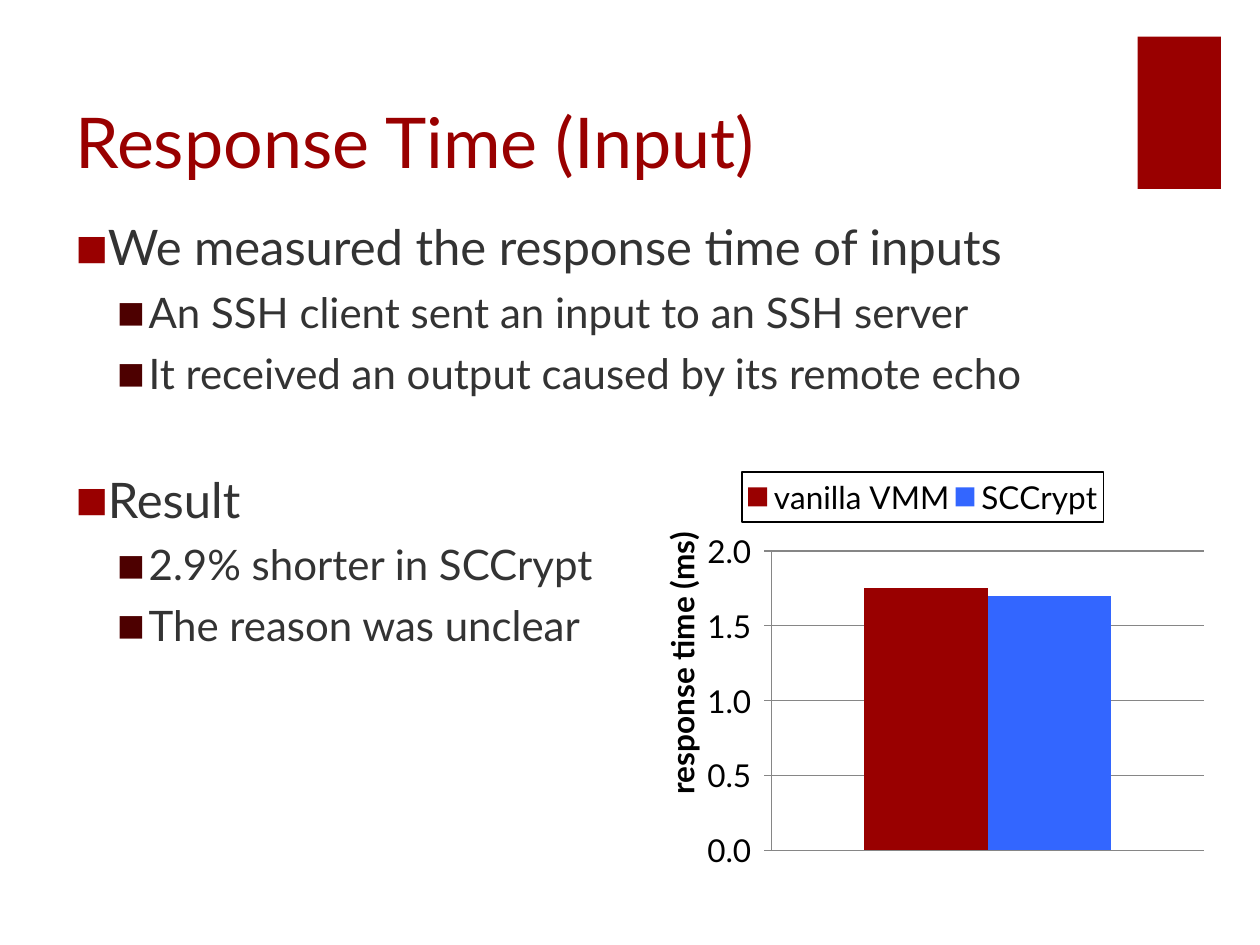
"""Builds the slide on response time for inputs, with its column chart."""
from lxml import etree
from pptx import Presentation, util as u
from pptx.chart import data
from pptx.dml.color import RGBColor
from pptx.enum import chart as ch, shapes, text
from pptx.oxml import parse_xml
from pptx.oxml.ns import nsdecls, qn

RED, DARK, GREY, BLUE = "990000", "4D0000", "333333", "3366FF"
FONT = "Lato"


def paint(item, color):
    if hasattr(item, "solid"):
        item.solid()
        item = item.fore_color
    else:
        item = item.color
    item.rgb = RGBColor.from_string(color)


def place(node, index, box, inner=False):
    for old in node.findall(qn("c:layout")):
        node.remove(old)
    target = '<c:layoutTarget val="inner"/>' if inner else ""
    modes = "".join(f'<c:{k}Mode val="edge"/>' for k in "xy")
    sizes = "".join(f'<c:{k} val="{v}"/>' for k, v in zip("xywh", box))
    node.insert(index, parse_xml(
        f'<c:layout {nsdecls("c")}><c:manualLayout>{target}{modes}{sizes}'
        '</c:manualLayout></c:layout>'))


prs = Presentation()
prs.slide_width, prs.slide_height = u.Inches(10), u.Inches(7.5)
slide = prs.slides.add_slide(prs.slide_layouts[1])

block = slide.shapes.add_shape(
    shapes.MSO_SHAPE.RECTANGLE,
    u.Inches(9.03), u.Inches(0.29), u.Inches(0.66), u.Inches(1.21))
block.shadow.inherit = False
paint(block.fill, RED)
block.line.fill.background()

title, body = slide.placeholders
for item, box in ((title, (0.5, 0.25, 8.42, 1.25)),
                  (body, (0.5, 1.67, 8.92, 5.28))):
    item.left, item.top, item.width, item.height = map(u.Inches, box)
    item.text_frame.word_wrap = True
    item.text_frame.auto_size = text.MSO_AUTO_SIZE.NONE

title.text_frame.text = "Response Time (Input)"
title.text_frame.vertical_anchor = text.MSO_ANCHOR.BOTTOM
head = title.text_frame.paragraphs[0]
head.alignment = text.PP_ALIGN.LEFT
head.font.size, head.font.name = u.Pt(40), FONT
paint(head.font, RED)

lines = (
    (0, "We measured the response time of inputs", 6),
    (1, "An SSH client sent an input to an SSH server", 6),
    (1, "It received an output caused by its remote echo", 6),
    (0, "Result", 41),
    (1, "2.9% shorter in SCCrypt", 6),
    (1, "The reason was unclear", 6),
)
styles = ((28, 0.25, RED), (24, 0.58, DARK))
body.text_frame.text = "\n".join(line[1] for line in lines)
for para, (level, words, gap) in zip(body.text_frame.paragraphs, lines):
    size, left, color = styles[level]
    para.level = level
    para.space_before = u.Pt(gap)
    para.font.size, para.font.name = u.Pt(size), FONT
    paint(para.font, GREY)
    props = para._p.get_or_add_pPr()
    props.set("marL", str(u.Inches(left)))
    props.set("indent", str(u.Inches(-0.25)))
    mark = props.find(qn("a:defRPr"))
    bullet = (f'<a:buClr {nsdecls("a")}><a:srgbClr val="{color}"/></a:buClr>',
              f'<a:buSzPct {nsdecls("a")} val="70000"/>',
              f'<a:buFont {nsdecls("a")} typeface="{FONT}"/>',
              f'<a:buChar {nsdecls("a")} char="■"/>')
    for xml in bullet:
        node = parse_xml(xml)
        if mark is None:
            props.append(node)
        else:
            mark.addprevious(node)
    for run in para.runs:
        run.font.size, run.font.name = u.Pt(size), FONT
        paint(run.font, GREY)

times = data.CategoryChartData()
times.categories = ["1"]
times.add_series("vanilla VMM", [1.75])
times.add_series("SCCrypt", [1.7])
chart = slide.shapes.add_chart(
    ch.XL_CHART_TYPE.COLUMN_CLUSTERED,
    u.Inches(4.95), u.Inches(3.68), u.Inches(4.7), u.Inches(3.3), times).chart
chart.has_title = False
chart.font.size, chart.font.name = u.Pt(18), FONT
paint(chart.font, "000000")
plot = chart.plots[0]
plot.gap_width, plot.overlap, plot.vary_by_categories = 150, 0, False
for bar, color in zip(plot.series, (RED, BLUE)):
    paint(bar.format.fill, color)

chart.category_axis.visible = False
axis = chart.value_axis
axis.minimum_scale, axis.maximum_scale, axis.major_unit = 0, 2, 0.5
axis.major_tick_mark = ch.XL_TICK_MARK.OUTSIDE
axis.tick_labels.number_format = r"#,##0.0_);[Red]\(#,##0.0\)"
axis.tick_labels.number_format_is_linked = False
for line in (axis.format.line, axis.major_gridlines.format.line):
    paint(line, "868686")
    line.width = u.Pt(0.75)
label = axis.axis_title
label.text_frame.text = "response time (ms)"
font = label.text_frame.paragraphs[0].runs[0].font
font.size, font.name, font.bold = u.Pt(18), FONT, True
paint(font, "000000")
turn = label.text_frame._txBody.bodyPr
turn.set("rot", "-5400000")
turn.set("vert", "horz")

chart.has_legend = True
legend = chart.legend
legend.position = ch.XL_LEGEND_POSITION.TOP
legend.include_in_layout = False
frame = etree.fromstring(
    f'<c:spPr {nsdecls("c", "a")}><a:ln w="9525"><a:solidFill>'
    '<a:srgbClr val="000000"/></a:solidFill></a:ln></c:spPr>')
legend._element.find(qn("c:overlay")).addnext(frame)
place(legend._element, 1, (0.2, 0.02, 0.61, 0.12))
place(label._element, 1, (0.05, 0.15))
place(chart._chartSpace.chart.plotArea, 0, (0.25, 0.21, 0.73, 0.72), True)

prs.save("out.pptx")
